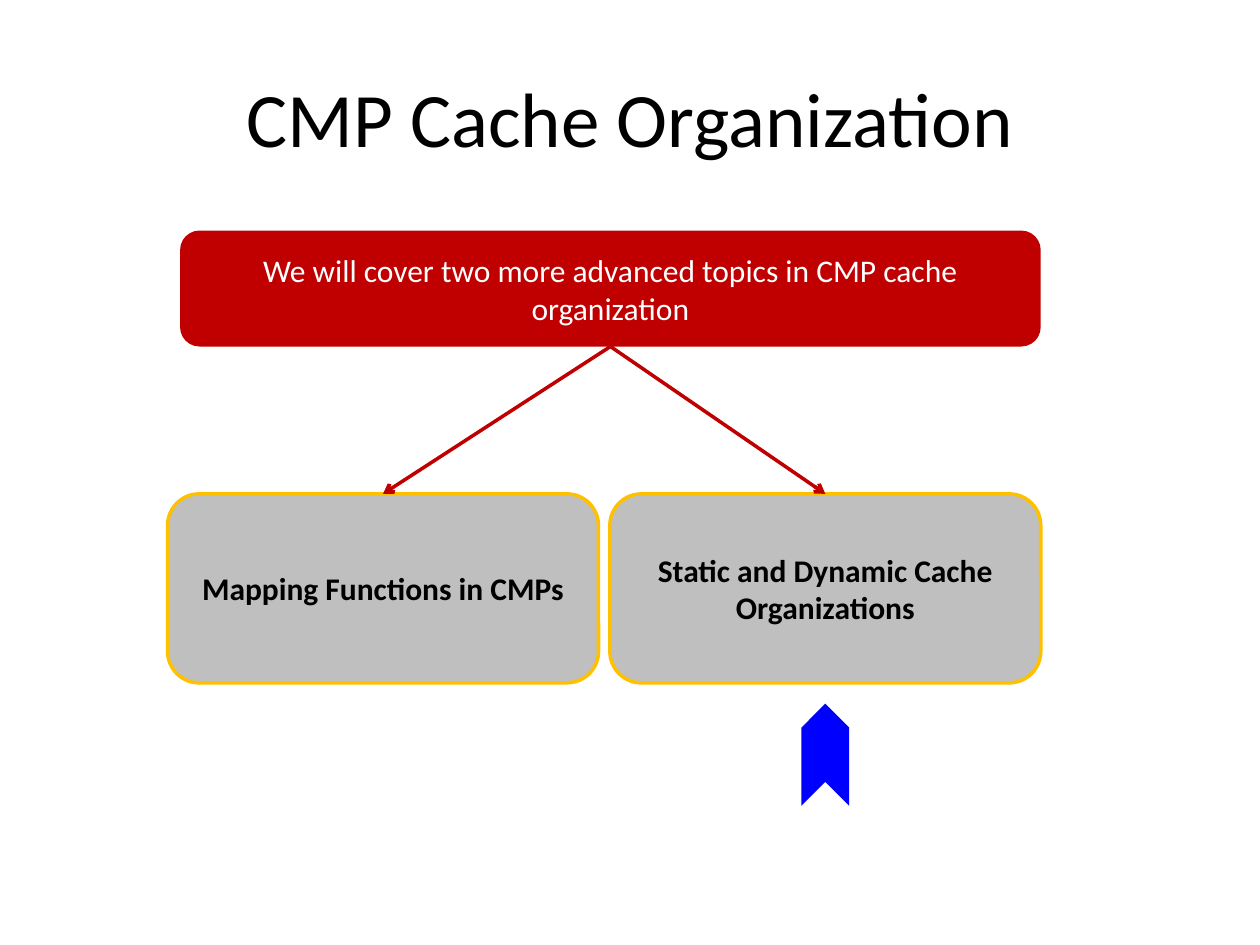
import pptx
import pptx.dml.color
import pptx.enum.shapes
import pptx.enum.text
import pptx.oxml.ns
import pptx.util
from lxml import etree

WIDTH, HEIGHT = 10, 7.5
BOTTOM, TOP = 2, 0  # connection sites of a rectangle
RED, GOLD, GREY, BLUE = "C00000", "FFC000", "BFBFBF", "0000FF"

# Topic grid: two equal columns under the overview
TOPIC_LEFT, TOPIC_TOP = 1.33, 3.92
TOPIC_WIDTH, TOPIC_HEIGHT = 3.42, 1.5
COLUMN_STEP = 3.51
TOPICS = ["Mapping Functions in CMPs", "Static and Dynamic Cache Organizations"]


def inches(*lengths):
    return [pptx.util.Inches(length) for length in lengths]


def color(hex_code):
    return pptx.dml.color.RGBColor.from_string(hex_code)


def write(shape, text, size=18, ink="000000", bold=False):
    frame = shape.text_frame
    frame.word_wrap = True
    frame.vertical_anchor = pptx.enum.text.MSO_ANCHOR.MIDDLE
    paragraph = frame.paragraphs[0]
    paragraph.alignment = pptx.enum.text.PP_ALIGN.CENTER
    run = paragraph.add_run()
    run.text = text
    run.font.name = "Calibri"
    run.font.size = pptx.util.Pt(size)
    run.font.bold = bold
    run.font.color.rgb = color(ink)


def add_block(slide, kind, box, fill, outline=None):
    block = slide.shapes.add_shape(kind, *inches(*box))
    block.shadow.inherit = False
    block.fill.solid()
    block.fill.fore_color.rgb = color(fill)
    if outline:
        block.line.color.rgb = color(outline)
        block.line.width = pptx.util.Pt(2)
    else:
        block.line.fill.background()
    return block


def add_arrow(slide, source, target):
    arrow = slide.shapes.add_connector(
        pptx.enum.shapes.MSO_CONNECTOR.STRAIGHT, 0, 0, 0, 0)
    arrow.begin_connect(source, BOTTOM)
    arrow.end_connect(target, TOP)
    arrow.line.color.rgb = color(RED)
    arrow.line.width = pptx.util.Pt(2)
    # Arrowhead, and no shadow
    qn = pptx.oxml.ns.qn
    etree.SubElement(arrow.line._get_or_add_ln(), qn("a:tailEnd"), type="arrow")
    etree.SubElement(arrow._element.spPr, qn("a:effectLst"))


def main():
    deck = pptx.Presentation()
    deck.slide_width, deck.slide_height = inches(WIDTH, HEIGHT)
    slide = deck.slides.add_slide(deck.slide_layouts[6])
    shapes = pptx.enum.shapes.MSO_SHAPE

    # Title
    title = slide.shapes.add_textbox(
        *inches(0.05 * WIDTH, 0.04 * HEIGHT, 0.9 * WIDTH, 1.25))
    write(title, "CMP Cache Organization", size=44)

    # Overview
    overview = add_block(
        slide, shapes.ROUNDED_RECTANGLE, (1.43, 1.83, 6.83, 0.92), RED)
    write(overview,
          "We will cover two more advanced topics in CMP cache organization",
          ink="FFFFFF")

    # Topics, each reached by an arrow
    for column, name in enumerate(TOPICS):
        left = TOPIC_LEFT + column * COLUMN_STEP
        topic = add_block(
            slide, shapes.ROUNDED_RECTANGLE,
            (left, TOPIC_TOP, TOPIC_WIDTH, TOPIC_HEIGHT), GREY, outline=GOLD)
        write(topic, name, bold=True)
        add_arrow(slide, overview, topic)

    # Marker pointing up at the second topic
    length, thickness = 0.81, 0.38
    center = TOPIC_LEFT + COLUMN_STEP + TOPIC_WIDTH / 2
    marker = add_block(
        slide, shapes.CHEVRON,
        (center - length / 2, 5.8, length, thickness), BLUE)
    marker.rotation = 270

    deck.save("out.pptx")


if __name__ == "__main__":
    main()
